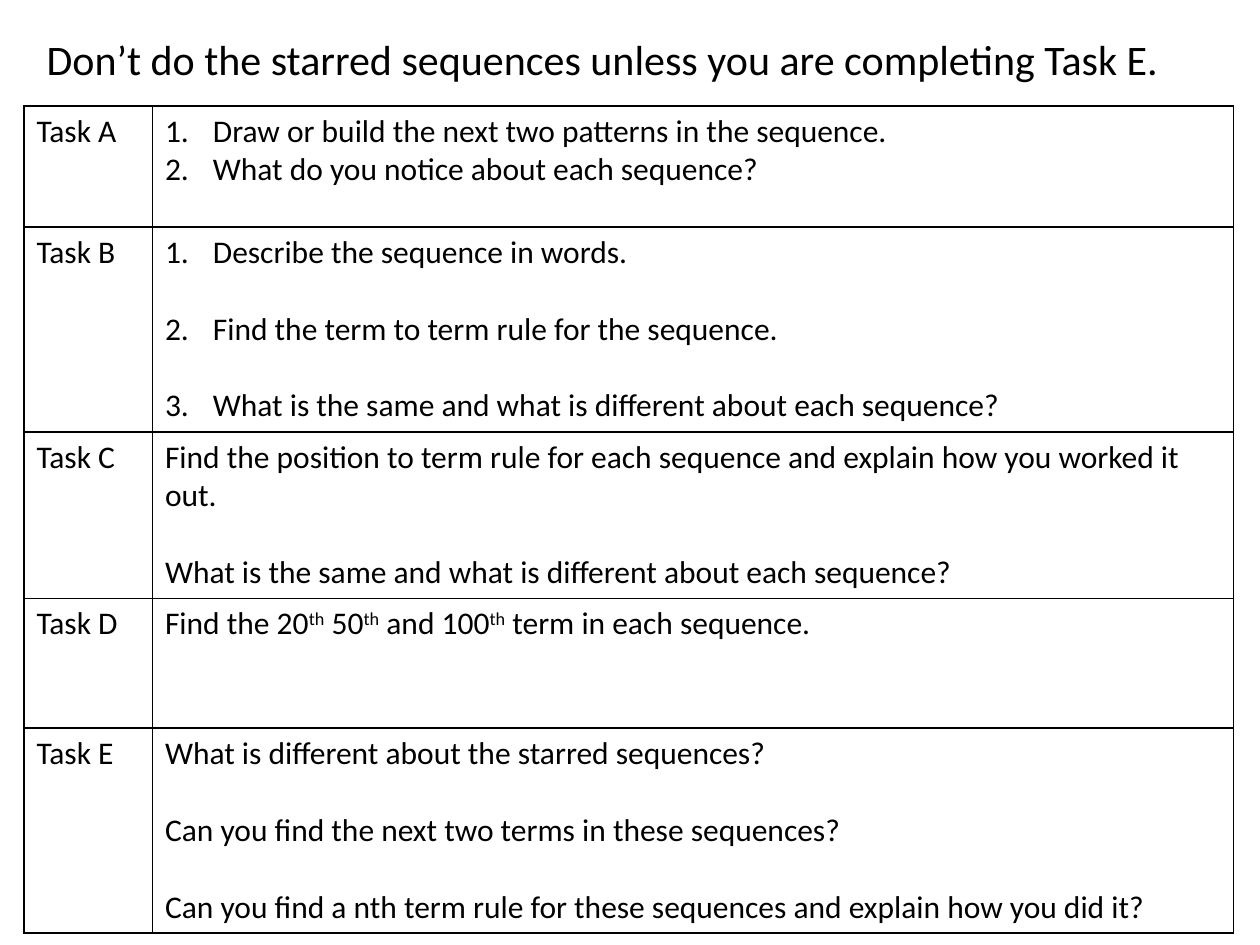
from dataclasses import dataclass

from lxml import etree
from pptx import Presentation
from pptx.dml.color import RGBColor
from pptx.enum.text import MSO_ANCHOR, MSO_AUTO_SIZE, PP_ALIGN
from pptx.oxml.ns import qn
from pptx.util import Inches, Pt

LEFT, MIDDLE = PP_ALIGN.LEFT, MSO_ANCHOR.MIDDLE
TITLE_ONLY = 5

TITLE = "Don’t do the starred sequences unless you are completing Task E."
SAME = "What is the same and what is different about each sequence?"

# name, row height, numbered, open spacing, lines; ^ marks superscript on and off
TASKS = [
    ("Task A", 0.96, True, False, [
        "Draw or build the next two patterns in the sequence.",
        "What do you notice about each sequence?"]),
    ("Task B", 1.6, True, True, [
        "Describe the sequence in words.",
        "Find the term to term rule for the sequence.",
        SAME]),
    ("Task C", 1.3, False, True, [
        "Find the position to term rule for each sequence "
        "and explain how you worked it out.",
        SAME]),
    ("Task D", 1.03, False, False, [
        "Find the 20^th^ 50^th^ and 100^th^ term in each sequence."]),
    ("Task E", 1.6, False, True, [
        "What is different about the starred sequences?",
        "Can you find the next two terms in these sequences?",
        "Can you find a nth term rule for these sequences "
        "and explain how you did it?"]),
]
COLS = (1.02, 8.58)


@dataclass(frozen=True)
class Theme:
    font: str = "Calibri"
    ink: str = "000000"
    title: int = 24
    body: int = 18
    gap: int = 22
    rule: int = 1
    indent: float = 0.38


THEME = Theme()


def write(frame, lines, size=THEME.body, numbered=False, gap=0):
    for i, line in enumerate(lines):
        para = frame.paragraphs[0] if i == 0 else frame.add_paragraph()
        para.alignment = LEFT
        para.space_before = Pt(gap if i else 0)
        if numbered:
            props = para._p.get_or_add_pPr()
            props.set("marL", str(Inches(THEME.indent)))
            props.set("indent", str(-Inches(THEME.indent)))
            etree.SubElement(props, qn("a:buFont"), typeface="+mj-lt")
            etree.SubElement(props, qn("a:buAutoNum"), type="arabicPeriod")
        for j, part in enumerate(line.split("^")):
            run = para.add_run()
            run.text = part
            font = run.font
            font.name, font.size = THEME.font, Pt(size)
            font.color.rgb = RGBColor.from_string(THEME.ink)
            if j % 2:
                run._r.get_or_add_rPr().set("baseline", "30000")


def frame_cell(cell):
    """Clear the fill and rule all four sides."""
    cell.fill.background()
    props = cell._tc.get_or_add_tcPr()
    for i, side in enumerate(("lnL", "lnR", "lnT", "lnB")):
        line = etree.Element(qn(f"a:{side}"), w=str(Pt(THEME.rule)))
        fill = etree.SubElement(line, qn("a:solidFill"))
        etree.SubElement(fill, qn("a:srgbClr"), val=THEME.ink)
        props.insert(i, line)


def add_title(slide):
    title = slide.shapes.title
    title.left, title.top = Inches(0.27), Inches(0.21)
    title.width, title.height = Inches(9.53), Inches(0.51)
    frame = title.text_frame
    frame.word_wrap, frame.auto_size = True, MSO_AUTO_SIZE.NONE
    frame.vertical_anchor = MIDDLE
    write(frame, [TITLE], size=THEME.title)


def add_tasks(slide):
    high = sum(task[1] for task in TASKS)
    table = slide.shapes.add_table(
        len(TASKS), len(COLS), Inches(0.19), Inches(0.84),
        Inches(sum(COLS)), Inches(high)).table
    table.first_row = table.horz_banding = False
    for col, width in zip(table.columns, COLS):
        col.width = Inches(width)
    for row, (name, height, numbered, spaced, lines) in zip(table.rows, TASKS):
        row.height = Inches(height)
        label, detail = row.cells
        write(label.text_frame, [name])
        write(detail.text_frame, lines, numbered=numbered,
              gap=THEME.gap if spaced else 0)
        for cell in (label, detail):
            frame_cell(cell)


def main():
    deck = Presentation()
    deck.slide_width, deck.slide_height = Inches(10), Inches(7.5)
    slide = deck.slides.add_slide(deck.slide_layouts[TITLE_ONLY])
    add_title(slide)
    add_tasks(slide)
    deck.save("out.pptx")


if __name__ == "__main__":
    main()
